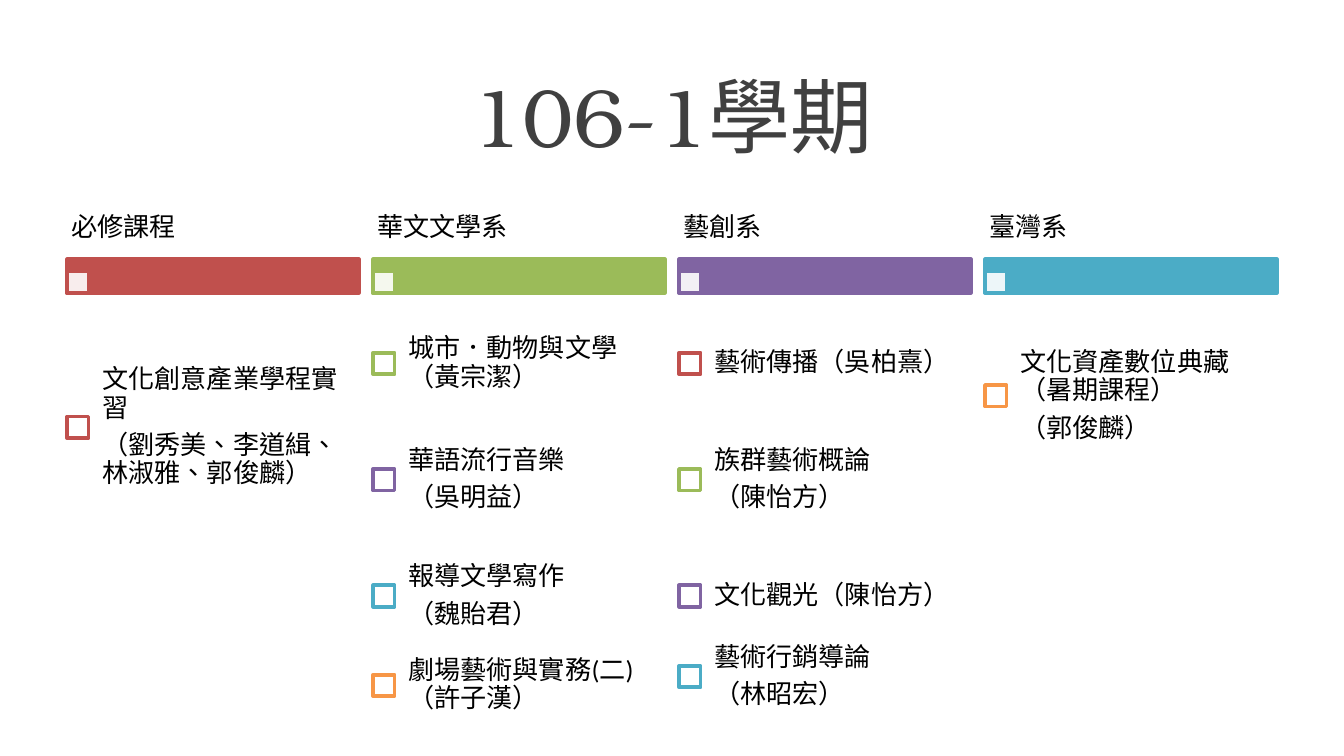
import itertools

import pptx
import pptx.dml.color
import pptx.enum.lang
import pptx.enum.shapes
import pptx.enum.text
import pptx.util
from lxml import etree

Inches = pptx.util.Inches
Pt = pptx.util.Pt
ANCHOR = pptx.enum.text.MSO_ANCHOR
ALIGN = pptx.enum.text.PP_ALIGN
LANGUAGE = pptx.enum.lang.MSO_LANGUAGE_ID.TRADITIONAL_CHINESE

COLORS = {
    "red": "C0504D",
    "green": "9BBB59",
    "purple": "8064A2",
    "teal": "4BACC6",
    "orange": "F79646",
    "white": "FFFFFF",
    "title": "404040",
    "text": "000000",
}
ACCENTS = ["red", "green", "purple", "teal", "orange"]
SLIDE_WIDTH = 10
SLIDE_HEIGHT = SLIDE_WIDTH * 9 / 16
MARGIN = 0.5
CONTENT_WIDTH = SLIDE_WIDTH - 2 * MARGIN
COLUMN_WIDTH = 2.17
BOX_SIZE = 0.16
INDENT = 0.15

DEPARTMENTS = [
    ("必修課程", [(1.78, ["文化創意產業學程實習", "（劉秀美、李道緝、林淑雅、郭俊麟）"])]),
    ("華文文學系", [
        (0.83, ["城市．動物與文學（黃宗潔）"]),
        (0.9, ["華語流行音樂", "（吳明益）"]),
        (0.83, ["報導文學寫作", "（魏貽君）"]),
        (0.5, ["劇場藝術與實務(二)（許子漢）"]),
    ]),
    ("藝創系", [
        (0.83, ["藝術傳播（吳柏熹）"]),
        (0.9, ["族群藝術概論", "（陳怡方）"]),
        (0.83, ["文化觀光（陳怡方）"]),
        (0.37, ["藝術行銷導論", "（林昭宏）"]),
    ]),
    ("臺灣系", [(1.31, ["文化資產數位典藏（暑期課程）", "（郭俊麟）"])]),
]


def rgb(name):
    """Return the named colour."""
    return pptx.dml.color.RGBColor.from_string(COLORS[name])


def set_all(target, values):
    """Set each attribute in values on the target."""
    for name, value in values.items():
        setattr(target, name, value)


def add_rect(slide, left, top, width, height, fill, line, opacity=100):
    """Draw a filled rectangle with a 2 pt outline."""
    rect = slide.shapes.add_shape(
        pptx.enum.shapes.MSO_SHAPE.RECTANGLE,
        Inches(left), Inches(top), Inches(width), Inches(height))
    rect.shadow.inherit = False
    rect.fill.solid()
    rect.fill.fore_color.rgb = rgb(fill)
    rect.line.color.rgb = rgb(line)
    rect.line.width = Pt(2)
    if opacity < 100:
        color = rect.fill._xPr.find(".//{*}srgbClr")
        alpha = etree.SubElement(color, color.tag.replace("srgbClr", "alpha"))
        alpha.set("val", str(opacity * 1000))


def add_text(slide, left, top, width, height, lines, inset_x, inset_y):
    """Place vertically centred paragraphs in a box."""
    frame = slide.shapes.add_textbox(
        Inches(left), Inches(top), Inches(width), Inches(height)).text_frame
    set_all(frame, {
        "word_wrap": True, "vertical_anchor": ANCHOR.MIDDLE,
        "margin_left": Inches(inset_x), "margin_right": Inches(inset_x),
        "margin_top": Inches(inset_y), "margin_bottom": Inches(inset_y),
        "text": "\n".join(lines),
    })
    for paragraph in frame.paragraphs:
        set_all(paragraph, {"line_spacing": 0.9, "space_after": Pt(4.9)})
        font = paragraph.runs[0].font
        set_all(font, {"name": "Calibri", "size": Pt(14), "language_id": LANGUAGE})
        font.color.rgb = rgb("text")


def add_title(slide, left, top, width, height, text):
    """Place and format the slide title."""
    title = slide.shapes.title
    set_all(title, {"left": Inches(left), "top": Inches(top),
                    "width": Inches(width), "height": Inches(height)})
    set_all(title.text_frame, {"text": text, "vertical_anchor": ANCHOR.MIDDLE})
    paragraph = title.text_frame.paragraphs[0]
    paragraph.alignment = ALIGN.CENTER
    font = paragraph.runs[0].font
    set_all(font, {"name": "TeX Gyre Bonum", "size": Pt(44), "language_id": LANGUAGE})
    font.color.rgb = rgb("title")


def add_department(slide, left, top, width, name, courses, accent, box_accents):
    """Draw a department heading, its bar and its list of courses."""
    add_rect(slide, left, top + 0.46, width, 0.25, accent, accent)
    add_rect(slide, left, top + 0.55, BOX_SIZE, BOX_SIZE, "white", accent, 90)
    add_text(slide, left, top, width, 0.46, [name], 0.03, 0.02)
    course_top = top + 0.82
    for height, lines in courses:
        box_top = course_top + (height - BOX_SIZE) / 2
        add_rect(slide, left, box_top, BOX_SIZE, BOX_SIZE, "white", next(box_accents))
        add_text(slide, left + INDENT, course_top, width - INDENT, height,
                 lines, 0.11, 0.11)
        course_top += height


def main():
    """Build the course slide."""
    deck = pptx.Presentation()
    set_all(deck, {"slide_width": Inches(SLIDE_WIDTH),
                   "slide_height": Inches(SLIDE_HEIGHT)})
    slide = deck.slides.add_slide(deck.slide_layouts.get_by_name("Title Only"))
    add_title(slide, MARGIN, 0.38, CONTENT_WIDTH, 0.94, "106-1學期")
    box_accents = itertools.cycle(ACCENTS)
    pitch = (CONTENT_WIDTH - COLUMN_WIDTH) / (len(DEPARTMENTS) - 1)
    for column, (name, courses) in enumerate(DEPARTMENTS):
        add_department(slide, MARGIN + column * pitch, 1.47, COLUMN_WIDTH,
                       name, courses, ACCENTS[column], box_accents)
    deck.save("out.pptx")


if __name__ == "__main__":
    main()
